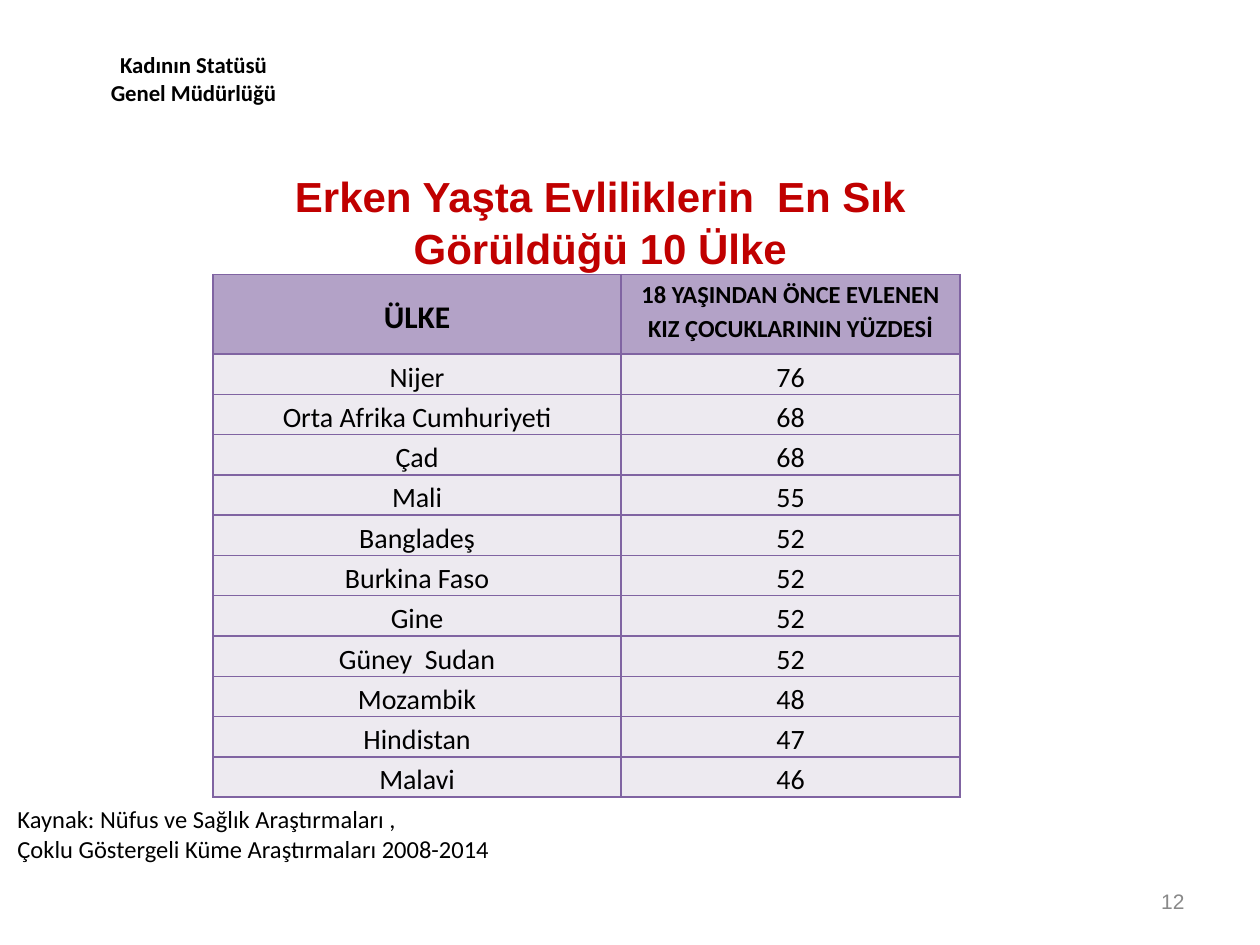
"""Build the slide on the ten countries with the most early marriages."""
import pptx
import pptx.dml.color
import pptx.enum.text
import pptx.oxml
import pptx.oxml.ns
import pptx.util

ALIGN = pptx.enum.text.PP_ALIGN
ANCHOR = pptx.enum.text.MSO_ANCHOR
COLORS = {
    "title": "C00000",
    "text": "000000",
    "number": "898989",
    "header": "B3A2C7",
    "body": "EDEAF0",
    "border": "8064A2",
}
HEADINGS = ("ÜLKE", "18 YAŞINDAN ÖNCE EVLENEN KIZ ÇOCUKLARININ YÜZDESİ")
COUNTRIES = [
    ("Nijer", 76),
    ("Orta Afrika Cumhuriyeti", 68),
    ("Çad", 68),
    ("Mali", 55),
    ("Bangladeş", 52),
    ("Burkina Faso", 52),
    ("Gine", 52),
    ("Güney  Sudan", 52),
    ("Mozambik", 48),
    ("Hindistan", 47),
    ("Malavi", 46),
]


def write_text(frame, text, size=14, font="Calibri", color="text", bold=False,
               align=ALIGN.LEFT, line_spacing=None, space_after=None):
    for index, line in enumerate(text.split("\n")):
        paragraph = frame.add_paragraph() if index else frame.paragraphs[0]
        paragraph.alignment = align
        if line_spacing:
            paragraph.line_spacing = line_spacing
        if space_after:
            paragraph.space_after = pptx.util.Pt(space_after)
        run = paragraph.add_run()
        run.text = line
        run.font.name = font
        run.font.size = pptx.util.Pt(size)
        run.font.bold = bold
        run.font.color.rgb = pptx.dml.color.RGBColor.from_string(COLORS[color])


class SlideBuilder:
    COLUMNS, ROWS = 100, 75

    def __init__(self, presentation):
        self.presentation = presentation
        self.slide = presentation.slides.add_slide(presentation.slide_layouts[6])

    def across(self, columns):
        return round(self.presentation.slide_width * columns / self.COLUMNS)

    def down(self, rows):
        return round(self.presentation.slide_height * rows / self.ROWS)

    def text(self, text, left, top, width, height, anchor=ANCHOR.BOTTOM,
             inset=0.5, **style):
        shape = self.slide.shapes.add_textbox(
            self.across(left), self.down(top), self.across(width), self.down(height))
        frame = shape.text_frame
        frame.word_wrap = True
        frame.vertical_anchor = anchor
        frame.margin_top = self.down(inset)
        write_text(frame, text, **style)

    def cell(self, cell, text, fill, anchor=ANCHOR.MIDDLE, **style):
        cell.fill.solid()
        cell.fill.fore_color.rgb = pptx.dml.color.RGBColor.from_string(COLORS[fill])
        cell.vertical_anchor = anchor
        cell.margin_left = cell.margin_right = self.across(0.7)
        cell.margin_top, cell.margin_bottom = self.down(0.1), 0
        write_text(cell.text_frame, text, align=ALIGN.CENTER,
                   line_spacing=1.15, space_after=10, **style)
        properties = cell._tc.get_or_add_tcPr()
        for index, edge in enumerate(("lnL", "lnR", "lnT", "lnB")):
            properties.insert(index, pptx.oxml.parse_xml(
                f'<a:{edge} {pptx.oxml.ns.nsdecls("a")} w="{pptx.util.Pt(1)}">'
                f'<a:solidFill><a:srgbClr val="{COLORS["border"]}"/></a:solidFill>'
                f'</a:{edge}>'))

    def table(self, headings, records, left, top, widths, header_height, row_height):
        count = len(records) + 1
        height = header_height + row_height * len(records)
        table = self.slide.shapes.add_table(
            count, len(widths), self.across(left), self.down(top),
            self.across(sum(widths)), self.down(height)).table
        for column, width in zip(table.columns, widths):
            column.width = self.across(width)
        for index, row in enumerate(table.rows):
            row.height = self.down(row_height if index else header_height)
        name, percentage = headings
        self.cell(table.cell(0, 0), name, "header", size=18, bold=True)
        self.cell(table.cell(0, 1), percentage, "header", ANCHOR.TOP, size=14, bold=True)
        for index, (country, value) in enumerate(records, start=1):
            self.cell(table.cell(index, 0), country, "body", ANCHOR.TOP, size=16)
            self.cell(table.cell(index, 1), str(value), "body", size=16)


def main():
    presentation = pptx.Presentation()
    presentation.slide_width = pptx.util.Inches(10)
    presentation.slide_height = pptx.util.Inches(7.5)
    builder = SlideBuilder(presentation)
    builder.text("Kadının Statüsü Genel Müdürlüğü", 6.7, 1.3, 17.3, 7.6,
                 size=13, bold=True, align=ALIGN.CENTER)
    builder.text("Erken Yaşta Evliliklerin  En Sık Görüldüğü 10 Ülke",
                 20.1, 11.5, 55.1, 8.7, anchor=ANCHOR.TOP, inset=1.8, size=24,
                 font="Arial", color="title", bold=True, align=ALIGN.CENTER,
                 line_spacing=1.05)
    builder.text("12", 71.7, 69.5, 23.3, 4, anchor=ANCHOR.MIDDLE, size=12,
                 font="Arial", color="number", align=ALIGN.RIGHT)
    builder.table(HEADINGS, COUNTRIES, 16.9, 21.8, (32.4, 26.9), 6.3, 3.2)
    builder.text("Kaynak: Nüfus ve Sağlık Araştırmaları ,\n"
                 "Çoklu Göstergeli Küme Araştırmaları 2008-2014",
                 0.4, 60.9, 67, 8.1)
    presentation.save("out.pptx")


if __name__ == "__main__":
    main()
